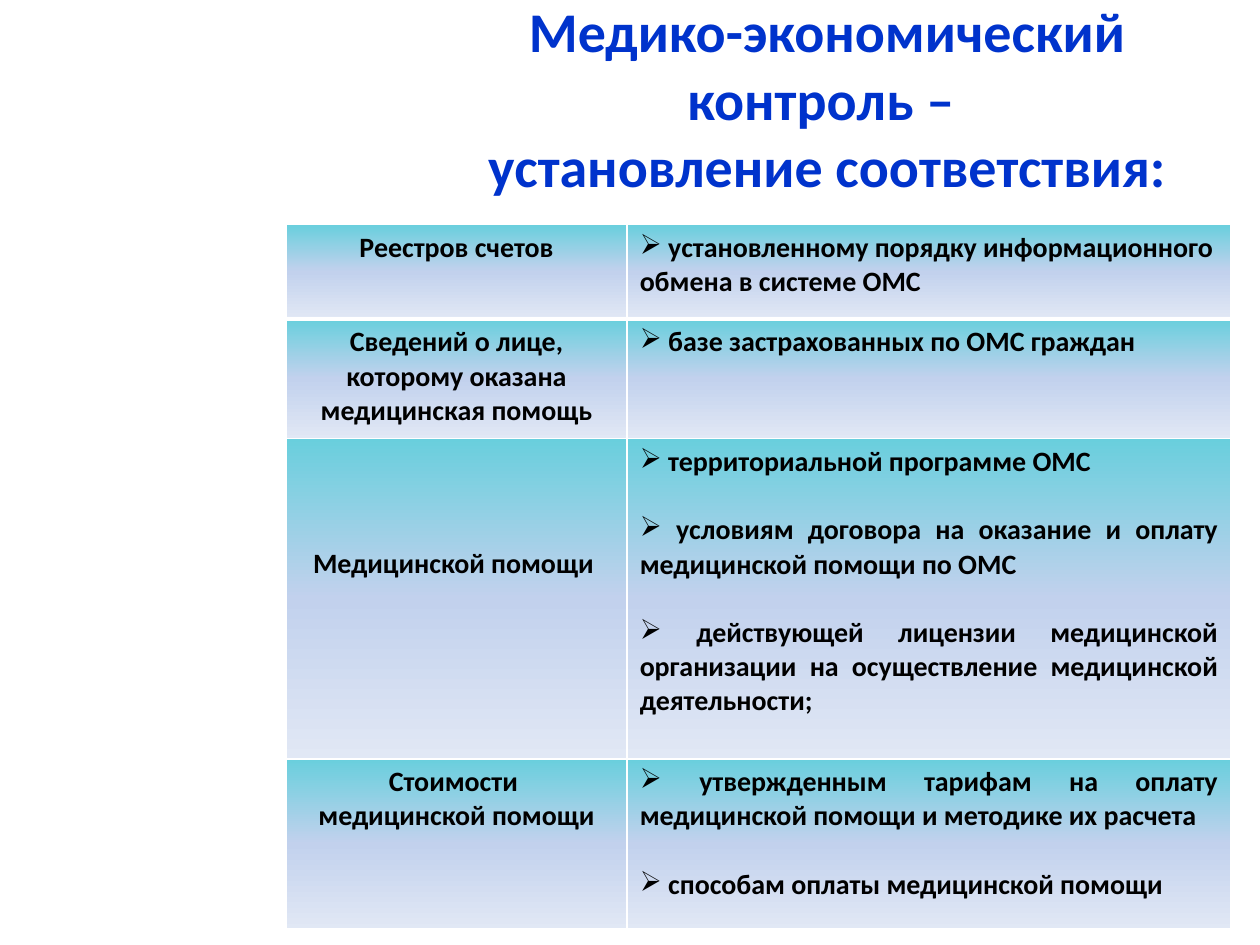
from dataclasses import dataclass

from lxml.etree import SubElement
from pptx import Presentation
from pptx.dml.color import RGBColor
from pptx.enum.text import MSO_ANCHOR, PP_ALIGN as Align
from pptx.oxml.ns import qn
from pptx.util import Pt

FONT = "Calibri"
TITLE_BLUE = RGBColor(0x00, 0x33, 0xCC)
BLACK = RGBColor(0x00, 0x00, 0x00)
WHITE = RGBColor(0xFF, 0xFF, 0xFF)
GRADIENT = (
    (0, RGBColor(0x69, 0xCF, 0xDD)),
    (50, RGBColor(0xC2, 0xD1, 0xED)),
    (100, RGBColor(0xE1, 0xE8, 0xF5)),
)
LINE_PITCH = 19.5  # height of one 16 pt line
COLUMN_WIDTHS = (195, 345)


@dataclass
class Check:
    """What is checked, and what it has to agree with."""
    subject: list[str]
    criteria: list[str]
    height: float
    align: Align = Align.JUSTIFY
    subject_drop: int = 0  # lines left free above the subject


CHECKS = [
    Check(["Реестров счетов"],
          [" установленному порядку информационного обмена в системе ОМС"],
          54, Align.LEFT),
    Check(["Сведений о лице,", " которому оказана ", "медицинская помощь"],
          [" базе застрахованных по ОМС граждан"],
          68.4, Align.LEFT),
    Check(["Медицинской помощи "],
          [" территориальной программе ОМС",
           " условиям договора на оказание и оплату медицинской помощи по ОМС",
           " действующей лицензии медицинской организации на осуществление "
           "медицинской деятельности;"],
          183, subject_drop=3),
    Check(["Стоимости ", "медицинской помощи"],
          [" утвержденным тарифам на оплату медицинской помощи и методике их расчета",
           " способам оплаты медицинской помощи"],
          97.2),
]


def add_run(paragraph, text: str, size: float, color: RGBColor) -> None:
    run = paragraph.add_run()
    run.text = text
    run.font.name = FONT
    run.font.size = Pt(size)
    run.font.bold = True
    run.font.color.rgb = color


def add_bullet(paragraph) -> None:
    properties = paragraph._p.get_or_add_pPr()
    properties.set("marL", "0")
    properties.set("indent", "0")
    SubElement(properties, qn("a:buChar"), char="➢")


def style_cell(cell, bottom_width: float) -> None:
    """White borders and a vertical three-stop gradient."""
    properties = cell._tc.get_or_add_tcPr()
    for side, width in (("L", 1), ("R", 1), ("T", 1), ("B", bottom_width)):
        border = SubElement(properties, qn(f"a:ln{side}"), w=str(Pt(width)))
        solid = SubElement(border, qn("a:solidFill"))
        SubElement(solid, qn("a:srgbClr"), val=str(WHITE))
    gradient = SubElement(properties, qn("a:gradFill"), rotWithShape="1")
    stops = SubElement(gradient, qn("a:gsLst"))
    for percent, color in GRADIENT:
        stop = SubElement(stops, qn("a:gs"), pos=str(percent * 1000))
        SubElement(stop, qn("a:srgbClr"), val=str(color))
    SubElement(gradient, qn("a:lin"), ang="5400000", scaled="0")


def fill_cell(cell, lines: list[str], align: Align,
              bulleted: bool = False) -> None:
    for index, line in enumerate(lines):
        frame = cell.text_frame
        paragraph = frame.add_paragraph() if index else frame.paragraphs[0]
        paragraph.alignment = align
        if bulleted:
            if index:
                paragraph.space_before = Pt(LINE_PITCH)
            add_bullet(paragraph)
        add_run(paragraph, line, 16, BLACK)


def add_title(slide) -> None:
    frame = slide.shapes.add_textbox(Pt(242), Pt(21.6), Pt(461.5), Pt(68.4)).text_frame
    frame.word_wrap = True
    frame.vertical_anchor = MSO_ANCHOR.MIDDLE
    heading = frame.paragraphs[0]
    heading.alignment = Align.CENTER
    add_run(heading, "Медико-экономический контроль – ", 32, TITLE_BLUE)
    heading.add_line_break()
    add_run(heading, "установление соответствия:", 32, TITLE_BLUE)


def add_checks(slide, checks: list[Check]) -> None:
    table = slide.shapes.add_table(
        len(checks), len(COLUMN_WIDTHS), Pt(163.4), Pt(128.2),
        Pt(sum(COLUMN_WIDTHS)), Pt(sum(check.height for check in checks))).table
    for column, width in zip(table.columns, COLUMN_WIDTHS):
        column.width = Pt(width)
    for index, check in enumerate(checks):
        row = table.rows[index]
        row.height = Pt(check.height)
        subject, criteria = row.cells
        for cell in (subject, criteria):
            style_cell(cell, 1 if index else 3)
        subject.margin_top = Pt(3.6 + check.subject_drop * LINE_PITCH)
        fill_cell(subject, check.subject, Align.CENTER)
        fill_cell(criteria, check.criteria, check.align, bulleted=True)


def main() -> None:
    deck = Presentation()
    deck.slide_width, deck.slide_height = Pt(720), Pt(540)
    slide = deck.slides.add_slide(deck.slide_layouts[6])
    add_title(slide)
    add_checks(slide, CHECKS)
    deck.save("out.pptx")


if __name__ == "__main__":
    main()
